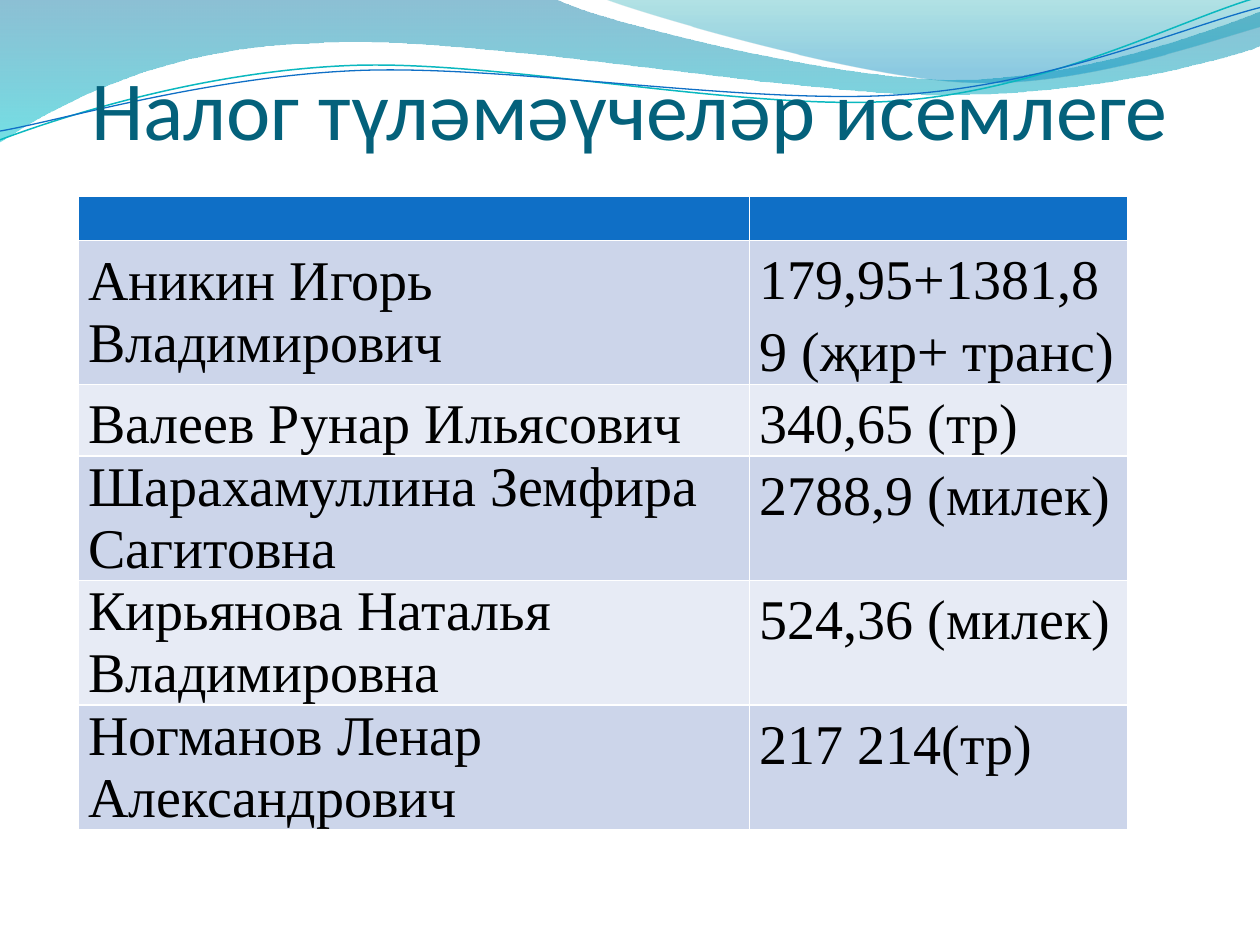
import math
import lxml.etree
import pptx
import pptx.util
import pptx.dml.color
import pptx.enum.text
import pptx.oxml.ns
from pptx.util import Inches

COLORS = {
    "title": "04617B", "text": "000000", "header": "0F6FC6",
    "band": "CCD5EA", "light": "E7EBF5", "border": "FFFFFF",
    "wave_top": "0074A1", "wave_bottom": "00C6CF",
    "crest_top": "00A1A9", "crest_bottom": "008BBF",
    "teal_line": "0AB8BF", "blue_line": "0F6FC6",
}
WAVE = [
    [(0, 0)], [(4.4, -0.01)],
    [(4.76, 0.17), (6.64, 0.63), (7.58, 0.63)],
    [(8.53, 0.63), (9.58, 0.26), (10, 0.09)],
    [(10.01, 0.36)],
    [(9.83, 0.44), (8.7, 0.76), (7.46, 0.75)],
    [(6.22, 0.75), (3.82, 0.28), (2.57, 0.34)],
    [(1.29, 0.36), (0.46, 0.83), (-0.01, 1.13)],
    [(0, 0)],
]
CREST = [
    [(4.79, -0.01)],
    [(5.09, 0.11), (6.82, 0.62), (7.69, 0.65)],
    [(8.56, 0.69), (9.61, 0.32), (10, 0.21)],
    [(10, 0)], [(4.79, -0.01)],
]
TEAL_CURVE = [
    [(0, 1.11)],
    [(0.48, 0.93), (1.58, 0.57), (2.77, 0.52)],
    [(3.95, 0.47), (5.93, 0.89), (7.13, 0.8)],
    [(8.33, 0.71), (9.38, 0.15), (9.98, -0.02)],
]
BLUE_CURVE = [
    [(0, 1.04)],
    [(0.47, 0.96), (1.64, 0.61), (2.83, 0.56)],
    [(4.03, 0.51), (5.97, 0.84), (7.17, 0.75)],
    [(8.36, 0.67), (9.41, 0.21), (10, 0.06)],
]
CURVE_TILT = 2.7
CURVE_CENTRE = (4.99, 0.58)
TAXPAYERS = [
    ("Аникин Игорь Владимирович", "179,95+1381,89 (җир+ транс)"),
    ("Валеев Рунар Ильясович", "340,65 (тр)"),
    ("Шарахамуллина Земфира Сагитовна", "2788,9 (милек)"),
    ("Кирьянова Наталья Владимировна", "524,36 (милек)"),
    ("Ногманов Ленар Александрович", "217 214(тр)"),
]
ONE_LINE_NAME = "Валеев Рунар Ильясович"
COLUMN_WIDTHS = [5.33, 3]
ROW_HEIGHTS = [0.35, 1.14, 0.57, 0.98, 0.98, 0.98]


def rgb(name):
    return pptx.dml.color.RGBColor.from_string(COLORS[name])


def add_child(parent, tag, **attributes):
    child = lxml.etree.SubElement(parent, pptx.oxml.ns.qn(tag))
    for key, value in attributes.items():
        child.set(key, str(value))
    return child


def level(point):
    angle = math.radians(CURVE_TILT)
    x, y = point[0] - CURVE_CENTRE[0], point[1] - CURVE_CENTRE[1]
    return (CURVE_CENTRE[0] + x * math.cos(angle) - y * math.sin(angle),
            CURVE_CENTRE[1] + x * math.sin(angle) + y * math.cos(angle))


def add_outline(shapes, segments, close):
    points = [(Inches(x), Inches(y)) for segment in segments for x, y in segment]
    builder = shapes.build_freeform(*points[0])
    builder.add_line_segments(points[1:], close=close)
    shape = builder.convert_to_shape()
    shape.shadow.inherit = False
    lines = iter(list(shape._element.iter(pptx.oxml.ns.qn("a:lnTo"))))
    for segment in segments[1:]:
        steps = [next(lines) for _ in segment]
        if len(steps) == 3:
            curve = lxml.etree.Element(pptx.oxml.ns.qn("a:cubicBezTo"))
            steps[0].addprevious(curve)
            for step in steps:
                curve.append(step[0])
                step.getparent().remove(step)
    return shape


def add_wave(page, segments, stops):
    shape = add_outline(page.shapes, segments, True)
    shape.line.fill.background()
    shape.fill.gradient()
    shape.fill.gradient_angle = 270
    for stop, (position, color, _) in zip(shape.fill.gradient_stops, stops):
        stop.position = position
        stop.color.rgb = rgb(color)
    colors = list(shape._element.spPr.iter(pptx.oxml.ns.qn("a:srgbClr")))
    for element, (_, _, opacity) in zip(colors, stops):
        add_child(element, "a:alpha", val=opacity * 1000)


def add_curve(group, segments, color, width):
    levelled = [[level(point) for point in segment] for segment in segments]
    shape = add_outline(group.shapes, levelled, False)
    shape.rotation = 360 - CURVE_TILT
    shape.fill.background()
    shape.line.color.rgb = rgb(color)
    shape.line.width = pptx.util.Pt(width)


def write_text(frame, text, *, font, size, color, align, spacing=None):
    para = frame.paragraphs[0]
    para.alignment = align
    if spacing:
        para.line_spacing = spacing
    span = para.add_run()
    span.text = text
    span.font.name = font
    span.font.size = pptx.util.Pt(size)
    span.font.color.rgb = rgb(color)


def place_title(page, text):
    title = page.shapes.title
    title.left, title.top = Inches(0.5), Inches(0.77)
    title.width, title.height = Inches(9), Inches(0.48)
    frame = title.text_frame
    frame.word_wrap = True
    frame.auto_size = pptx.enum.text.MSO_AUTO_SIZE.NONE
    frame.vertical_anchor = pptx.enum.text.MSO_ANCHOR.BOTTOM
    frame.margin_left = frame.margin_right = frame.margin_bottom = 0
    frame.margin_top = Inches(0.05)
    write_text(frame, text, font="Calibri", size=48, color="title",
               align=pptx.enum.text.PP_ALIGN.CENTER)


def format_cell(cell, fill):
    cell.margin_left = cell.margin_right = Inches(0.08)
    cell.margin_top = cell.margin_bottom = 0
    properties = cell._tc.get_or_add_tcPr()
    for side in "LRTB":
        line = add_child(properties, f"a:ln{side}", w=pptx.util.Pt(1))
        solid = add_child(line, "a:solidFill")
        add_child(solid, "a:srgbClr", val=COLORS["border"])
    cell.fill.solid()
    cell.fill.fore_color.rgb = rgb(fill)


def add_tax_table(page):
    frame = page.shapes.add_table(
        len(ROW_HEIGHTS), len(COLUMN_WIDTHS), Inches(0.62), Inches(1.56),
        Inches(sum(COLUMN_WIDTHS)), Inches(sum(ROW_HEIGHTS)))
    table = frame.table
    table.horz_banding = False
    align = pptx.enum.text.PP_ALIGN
    for column, width in zip(table.columns, COLUMN_WIDTHS):
        column.width = Inches(width)
    for row, height in zip(table.rows, ROW_HEIGHTS):
        row.height = Inches(height)
    for cell in table.rows[0].cells:
        format_cell(cell, "header")
    for number, values in enumerate(TAXPAYERS, 1):
        for column, text in enumerate(values):
            cell = table.cell(number, column)
            format_cell(cell, "band" if number % 2 else "light")
            centred = column == 0 and text != ONE_LINE_NAME
            if centred:
                cell.vertical_anchor = pptx.enum.text.MSO_ANCHOR.MIDDLE
            write_text(cell.text_frame, text, font="Times New Roman", size=32,
                       color="text",
                       align=align.LEFT if centred else align.JUSTIFY,
                       spacing=None if centred else 1.15)


def main():
    deck = pptx.Presentation()
    deck.slide_width, deck.slide_height = Inches(10), Inches(7.5)
    page = deck.slides.add_slide(deck.slide_layouts[5])
    add_wave(page, WAVE, [(0, "wave_top", 45), (1, "wave_bottom", 55)])
    add_wave(page, CREST, [(0, "crest_top", 30), (0.8, "crest_bottom", 45)])
    group = page.shapes.add_group_shape()
    add_curve(group, TEAL_CURVE, "teal_line", 0.85)
    add_curve(group, BLUE_CURVE, "blue_line", 0.75)
    place_title(page, "Налог түләмәүчеләр исемлеге")
    title = page.shapes.title._element
    title.getparent().append(title)
    add_tax_table(page)
    deck.save("out.pptx")


if __name__ == "__main__":
    main()
